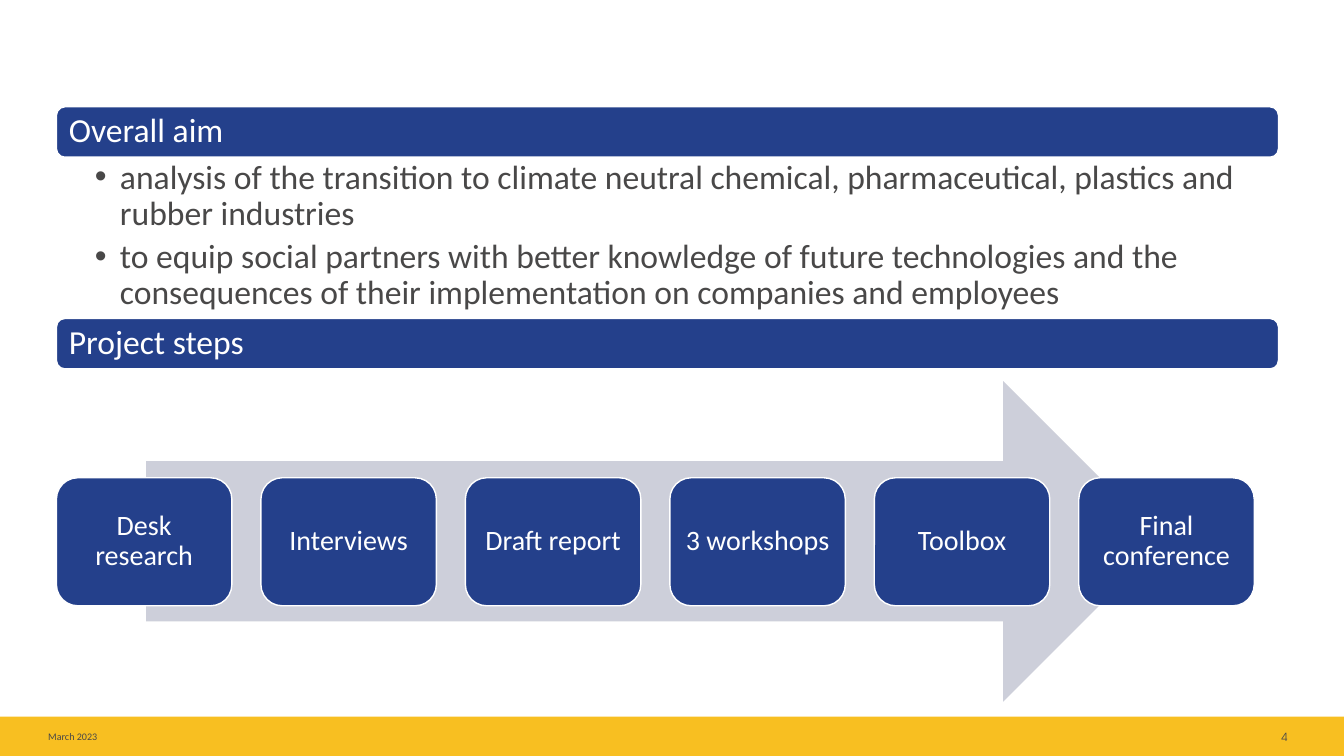
from lxml import etree
from pptx import Presentation
from pptx.dml.color import RGBColor
from pptx.enum import shapes, text
from pptx.oxml import ns
from pptx.util import Inches, Pt

COLORS = {"navy": "24408B", "yellow": "F8BF21", "arrow": "CDCFDA",
          "body": "494848", "number": "4A4949", "white": "FFFFFF"}
HEADINGS = [("Overall aim", 1.06), ("Project steps", 3.16)]
AIMS = [
    "analysis of the transition to climate neutral chemical, pharmaceutical, "
    "plastics and rubber industries",
    "to equip social partners with better knowledge of future technologies and "
    "the consequences of their implementation on companies and employees",
]
STEPS = ["Desk research", "Interviews", "Draft report", "3 workshops", "Toolbox",
         "Final conference"]
FOOTER = [
    ("March 2023", (0.38, 7.19, 1.97, 0.23), (0.1, 0.05, 0.1, 0.05), 7.2,
     "Calibri", "body", text.PP_ALIGN.LEFT),
    ("4", (10.8, 7.2, 1.97, 0.23), (0, 0, 0, 0), 8,
     "TeX Gyre Adventor", "number", text.PP_ALIGN.RIGHT),
]
LEFT, WIDTH, BAR_HEIGHT = 0.56, 12.12, 0.5
STEP_TOP, STEP_WIDTH, STEP_HEIGHT, LAST_STEP_LEFT = 4.74, 1.74, 1.27, 10.7
SHAPE = shapes.MSO_SHAPE


def rgb(name):
    return RGBColor.from_string(COLORS[name])


def add_shape(slide, kind, box, fill, outlined=False):
    sp = slide.shapes.add_shape(kind, *map(Inches, box))
    sp.shadow.inherit = False
    sp.fill.solid()
    sp.fill.fore_color.rgb = rgb(fill)
    if outlined:
        sp.line.color.rgb = rgb("white")
        sp.line.width = Pt(1)
    else:
        sp.line.fill.background()
    return sp


def set_text(sp, lines, size, color, align, insets, font="Calibri",
             anchor=text.MSO_ANCHOR.MIDDLE, spacing=0.9, after=0, bullet=False):
    tf = sp.text_frame
    tf.word_wrap = True
    tf.vertical_anchor = anchor
    tf.margin_left, tf.margin_top, tf.margin_right, tf.margin_bottom = map(Inches, insets)
    tf.text = "\n".join(lines)
    for p in tf.paragraphs:
        p.alignment = align
        p.line_spacing = spacing
        p.space_after = Pt(after)
        if bullet:
            ppr = p._p.get_or_add_pPr()
            ppr.set("marL", str(Inches(0.25)))
            ppr.set("indent", str(-Inches(0.25)))
            etree.SubElement(ppr, ns.qn("a:buFont"), typeface="Arial")
            etree.SubElement(ppr, ns.qn("a:buChar"), char="•")
        for r in p.runs:
            r.font.size = Pt(size)
            r.font.name = font
            r.font.color.rgb = rgb(color)


def main():
    prs = Presentation()
    prs.slide_width, prs.slide_height = Inches(13.33), Inches(7.5)
    s = prs.slides.add_slide(prs.slide_layouts[6])

    add_shape(s, SHAPE.RECTANGLE, (0, 7.11, 13.33, 0.39), "yellow")
    for label, box, insets, size, font, color, align in FOOTER:
        sp = s.shapes.add_textbox(*map(Inches, box))
        set_text(sp, [label], size, color, align, insets, font, spacing=1.0)

    add_shape(s, SHAPE.RIGHT_ARROW, (1.45, 3.78, 10.09, 3.18), "arrow")
    pitch = (LAST_STEP_LEFT - LEFT) / (len(STEPS) - 1)
    for i, step in enumerate(STEPS):
        box = (LEFT + i * pitch, STEP_TOP, STEP_WIDTH, STEP_HEIGHT)
        sp = add_shape(s, SHAPE.ROUNDED_RECTANGLE, box, "navy", outlined=True)
        set_text(sp, [step], 20, "white", text.PP_ALIGN.CENTER, (0.08,) * 4)

    for heading, top in HEADINGS:
        box = (LEFT, top, WIDTH, BAR_HEIGHT)
        sp = add_shape(s, SHAPE.ROUNDED_RECTANGLE, box, "navy", outlined=True)
        set_text(sp, [heading], 24, "white", text.PP_ALIGN.LEFT, (0.1,) * 4)

    aims = s.shapes.add_textbox(*map(Inches, (LEFT, 1.56, WIDTH, 2.18)))
    set_text(aims, AIMS, 24, "body", text.PP_ALIGN.LEFT, (0.38, 0.03, 0.19, 0.03),
             anchor=text.MSO_ANCHOR.TOP, after=4.8, bullet=True)

    prs.save("out.pptx")


if __name__ == "__main__":
    main()
